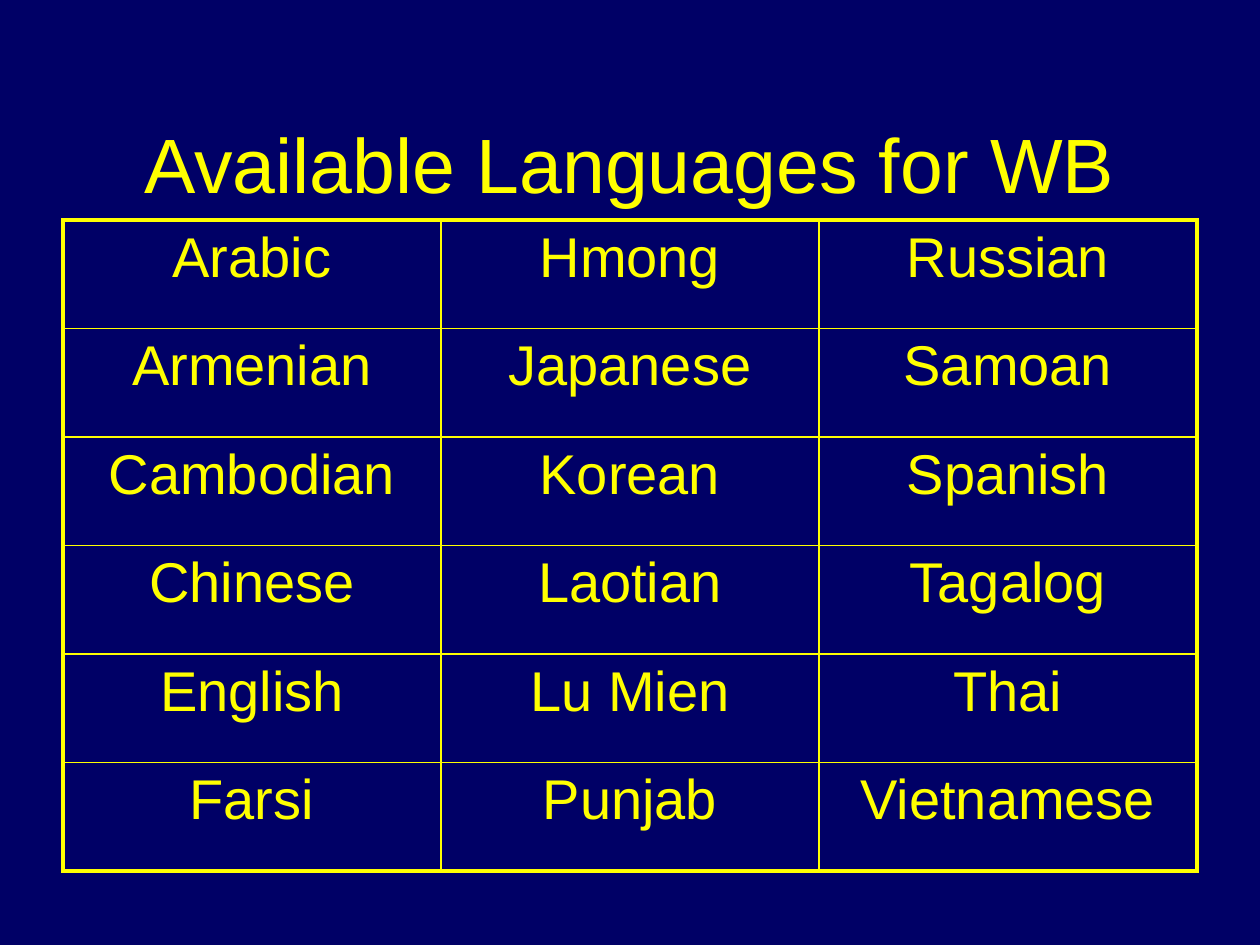
import pptx
import pptx.dml.color
import pptx.enum.text
import pptx.oxml
import pptx.oxml.ns
import pptx.util

PX = 914400 / 126
FONT = "Arial"
COLORS = {"background": "000066", "yellow": "FFFF00"}
THIN, THICK = 1, 2.25
LANGUAGES = [
    ["Arabic", "Hmong", "Russian"],
    ["Armenian", "Japanese", "Samoan"],
    ["Cambodian", "Korean", "Spanish"],
    ["Chinese", "Laotian", "Tagalog"],
    ["English", "Lu Mien", "Thai"],
    ["Farsi", "Punjab", "Vietnamese"],
]


def px(*lengths):
    """Turn pixel lengths into EMU."""
    return [pptx.util.Emu(round(n * PX)) for n in lengths]


def rgb(name):
    """Look up a named colour."""
    return pptx.dml.color.RGBColor.from_string(COLORS[name])


def write(tf, text, size):
    """Write one centred yellow paragraph."""
    p = tf.paragraphs[0]
    p.text = text
    p.alignment = pptx.enum.text.PP_ALIGN.CENTER
    p.font.name = FONT
    p.font.size = pptx.util.Pt(size)
    p.font.color.rgb = rgb("yellow")


def add_title(slide, text, box):
    """Add the slide title."""
    tf = slide.shapes.add_textbox(*px(*box)).text_frame
    tf.word_wrap = True
    tf.vertical_anchor = pptx.enum.text.MSO_ANCHOR.MIDDLE
    write(tf, text, 44)


def set_borders(cell, widths):
    """Draw cell borders, given widths in points by side."""
    tc_pr = cell._tc.get_or_add_tcPr()
    for i, (side, width) in enumerate(widths.items()):
        ln = pptx.oxml.parse_xml(
            f'<a:ln{side} {pptx.oxml.ns.nsdecls("a")} w="{pptx.util.Pt(width)}">'
            f'<a:solidFill><a:srgbClr val="{COLORS["yellow"]}"/></a:solidFill>'
            f'</a:ln{side}>'
        )
        tc_pr.insert(i, ln)


def add_language_table(slide, rows, box):
    """Add the language grid with a thick outer frame."""
    last_row, last_col = len(rows) - 1, len(rows[0]) - 1
    table = slide.shapes.add_table(len(rows), len(rows[0]), *px(*box)).table
    table.first_row = table.horz_banding = False
    for r, row in enumerate(rows):
        for c, language in enumerate(row):
            cell = table.cell(r, c)
            write(cell.text_frame, language, 32)
            cell.fill.background()
            set_borders(cell, {
                "L": THICK if c == 0 else THIN,
                "R": THICK if c == last_col else THIN,
                "T": THICK if r == 0 else THIN,
                "B": THICK if r == last_row else THIN,
            })


def main():
    """Build and save the slide."""
    prs = pptx.Presentation()
    prs.slide_width, prs.slide_height = px(1260, 945)
    slide = prs.slides.add_slide(prs.slide_layouts[6])
    slide.background.fill.solid()
    slide.background.fill.fore_color.rgb = rgb("background")
    add_title(slide, "Available Languages for WB", (94, 84, 1072, 158))
    add_language_table(slide, LANGUAGES, (63, 220, 1134, 651))
    prs.save("out.pptx")


if __name__ == "__main__":
    main()
